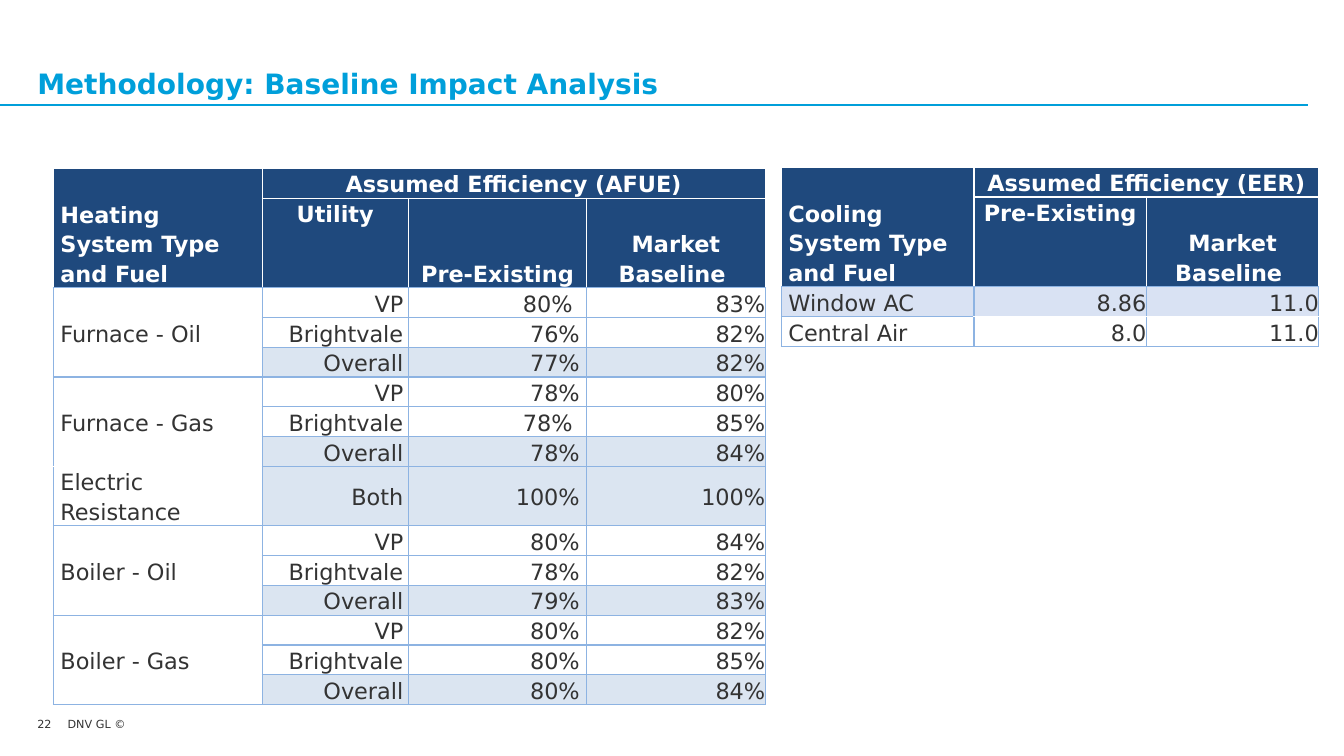
from dataclasses import dataclass

from lxml import etree
from pptx import Presentation
from pptx import util as u
from pptx.dml.color import RGBColor
from pptx.enum import shapes, text
from pptx.oxml.ns import qn


@dataclass(frozen=True)
class Theme:
    font: str = "DejaVu Sans"
    accent: str = "009FDA"
    ink: str = "333333"
    white: str = "FFFFFF"
    header: str = "1F497D"
    overall: str = "DBE5F1"
    cooling: str = "D9E2F3"
    border: str = "8DB3E2"
    title_size: int = 20
    table_size: int = 16
    footer_size: int = 8


THEME = Theme()
LEFT, CENTER, RIGHT = text.PP_ALIGN.LEFT, text.PP_ALIGN.CENTER, text.PP_ALIGN.RIGHT
TOP, MIDDLE, BOTTOM = text.MSO_ANCHOR.TOP, text.MSO_ANCHOR.MIDDLE, text.MSO_ANCHOR.BOTTOM
HEADER_ROWS = 2
LINE_HEIGHT = 0.29
HEADER_HEIGHTS = [LINE_HEIGHT, 0.89]
PAD = 0.07

# Each system is followed by its utility, pre-existing and market baseline values
HEATING = {
    "Furnace - Oil": [("VP", "80% ", "83%"), ("Brightvale", "76%", "82%"), ("Overall", "77%", "82%")],
    "Furnace - Gas": [("VP", "78%", "80%"), ("Brightvale", "78% ", "85%"), ("Overall", "78%", "84%")],
    "Electric Resistance": [("Both", "100%", "100%")],
    "Boiler - Oil": [("VP", "80%", "84%"), ("Brightvale", "78%", "82%"), ("Overall", "79%", "83%")],
    "Boiler - Gas": [("VP", "80%", "82%"), ("Brightvale", "80%", "85%"), ("Overall", "80%", "84%")],
}
COOLING = [("Window AC", "8.86", "11.0"), ("Central Air", "8.0", "11.0")]


def write(frame, content, size, color=THEME.ink, bold=False, align=LEFT,
          anchor=TOP, spacing=None, wrap=True):
    """Fill a text frame, one paragraph per line."""
    frame.word_wrap = wrap
    frame.vertical_anchor = anchor
    for index, line in enumerate(content.split("\n")):
        paragraph = frame.paragraphs[0] if index == 0 else frame.add_paragraph()
        paragraph.alignment = align
        paragraph.line_spacing = spacing
        run = paragraph.add_run()
        run.text = line
        run.font.name, run.font.size, run.font.bold = THEME.font, u.Pt(size), bold
        run.font.color.rgb = RGBColor.from_string(color)


def clear_margins(frame):
    frame.margin_left = frame.margin_right = frame.margin_top = frame.margin_bottom = 0


def set_borders(cell, **colors):
    """Draw one-point edges, given as L, R, T and B."""
    properties = cell._tc.get_or_add_tcPr()
    for side in "LRTB":
        line = etree.SubElement(properties, qn(f"a:ln{side}"), w=str(u.Pt(1)))
        fill = etree.SubElement(line, qn("a:solidFill"))
        etree.SubElement(fill, qn("a:srgbClr"), val=colors[side])


def write_cell(cell, content, fill, padding=(0, 0), **style):
    cell.margin_left, cell.margin_right = map(u.Inches, padding)
    cell.margin_top = cell.margin_bottom = 0
    cell.fill.solid()
    cell.fill.fore_color.rgb = RGBColor.from_string(fill)
    if content:
        anchor = style.pop("anchor")
        write(cell.text_frame, content, THEME.table_size, spacing=1.15, **style)
        cell.vertical_anchor = anchor


def add_grid(slide, left, top, widths, heights, white_below):
    """Add a plain bordered table; white_below lists cells with a white lower edge."""
    table = slide.shapes.add_table(
        len(heights), len(widths), u.Inches(left), u.Inches(top),
        u.Inches(sum(widths)), u.Inches(sum(heights))).table
    table.first_row = table.horz_banding = False
    for column, width in zip(table.columns, widths):
        column.width = u.Inches(width)
    for row, height in zip(table.rows, heights):
        row.height = u.Inches(height)
    for r in range(len(heights)):
        for c in range(len(widths)):
            side = THEME.white if r < HEADER_ROWS else THEME.border
            above = (r < HEADER_ROWS) or (r - 1, c) in white_below
            below = (r < HEADER_ROWS - 1) or (r, c) in white_below
            set_borders(table.cell(r, c), L=side, R=side,
                        T=THEME.white if above else THEME.border,
                        B=THEME.white if below else THEME.border)
    return table


def write_header(table, system, measure, columns):
    """Write the two header rows; columns holds (label, anchor, padding)."""
    last = len(columns)
    style = dict(color=THEME.white, bold=True)
    table.cell(0, 0).merge(table.cell(1, 0))
    table.cell(0, 1).merge(table.cell(0, last))
    write_cell(table.cell(0, 0), f"{system} System Type\nand Fuel", THEME.header,
               (PAD, PAD), anchor=BOTTOM, **style)
    write_cell(table.cell(0, 1), f"Assumed Efficiency ({measure})", THEME.header,
               align=CENTER, anchor=TOP, **style)
    for c, (label, anchor, padding) in enumerate(columns, 1):
        write_cell(table.cell(1, c), label, THEME.header, (padding, padding),
                   align=CENTER, anchor=anchor, **style)


def add_heating_table(slide, left, top):
    heights = HEADER_HEIGHTS + [
        LINE_HEIGHT * (2 if len(rows) == 1 else 1) for rows in HEATING.values() for _ in rows]
    table = add_grid(slide, left, top, [2.07, 1.45, 1.77, 1.77], heights, {(5, 0), (7, 0)})
    write_header(table, "Heating", "AFUE", [
        ("Utility", TOP, 0), ("Pre-Existing", BOTTOM, PAD), ("Market Baseline ", BOTTOM, 0)])
    r = HEADER_ROWS
    for system, rows in HEATING.items():
        if len(rows) > 1:
            table.cell(r, 0).merge(table.cell(r + len(rows) - 1, 0))
        write_cell(table.cell(r, 0), system, THEME.white, (PAD, PAD), anchor=MIDDLE)
        for values in rows:
            fill = THEME.overall if values[0] in ("Overall", "Both") else THEME.white
            for c, (value, padding) in enumerate(zip(values, (0.05, PAD, 0)), 1):
                write_cell(table.cell(r, c), value, fill, (0, padding),
                           align=RIGHT, anchor=MIDDLE)
            r += 1


def add_cooling_table(slide, left, top):
    heights = HEADER_HEIGHTS + [LINE_HEIGHT] * len(COOLING)
    table = add_grid(slide, left, top, [1.91, 1.71, 1.71], heights, {(2, 1), (2, 2)})
    write_header(table, "Cooling", "EER", [
        ("Pre-Existing", TOP, 0), ("Market Baseline ", BOTTOM, 0)])
    for r, (values, fill) in enumerate(zip(COOLING, (THEME.cooling, THEME.white)), HEADER_ROWS):
        for c, value in enumerate(values):
            write_cell(table.cell(r, c), value, fill, (0, 0) if c else (PAD, PAD),
                       align=RIGHT if c else LEFT, anchor=MIDDLE)


def add_title(slide, left, top, width, height):
    title = slide.shapes.title
    title.left, title.top = u.Inches(left), u.Inches(top)
    title.width, title.height = u.Inches(width), u.Inches(height)
    title.text_frame.auto_size = text.MSO_AUTO_SIZE.NONE
    clear_margins(title.text_frame)
    write(title.text_frame, "Methodology: Baseline Impact Analysis", THEME.title_size,
          THEME.accent, bold=True, anchor=BOTTOM)
    # Rule under the title, running from the slide edge
    rule_top = u.Inches(top + height + 0.05)
    rule = slide.shapes.add_connector(
        shapes.MSO_CONNECTOR.STRAIGHT, 0, rule_top, u.Inches(left + width), rule_top)
    rule.line.color.rgb = RGBColor.from_string(THEME.accent)
    rule.line.width = u.Pt(1.25)
    etree.SubElement(rule._element.spPr, qn("a:effectLst"))


def add_footer(slide, left, top):
    for label, offset, width, height in [("22", 0, 0.3, 0.2), ("DNV GL ©", 0.3, 0.59, 0.13)]:
        box = slide.shapes.add_textbox(
            u.Inches(left + offset), u.Inches(top), u.Inches(width), u.Inches(height))
        clear_margins(box.text_frame)
        write(box.text_frame, label, THEME.footer_size, wrap=False)


def main():
    presentation = Presentation()
    presentation.slide_width, presentation.slide_height = u.Inches(13.33), u.Inches(7.5)
    slide = presentation.slides.add_slide(presentation.slide_layouts.get_by_name("Title Only"))
    add_title(slide, 0.37, 0.26, 12.6, 0.73)
    add_heating_table(slide, 0.53, 1.67)
    add_cooling_table(slide, 7.75, 1.66)
    add_footer(slide, 0.37, 7.12)
    presentation.save("out.pptx")


if __name__ == "__main__":
    main()
